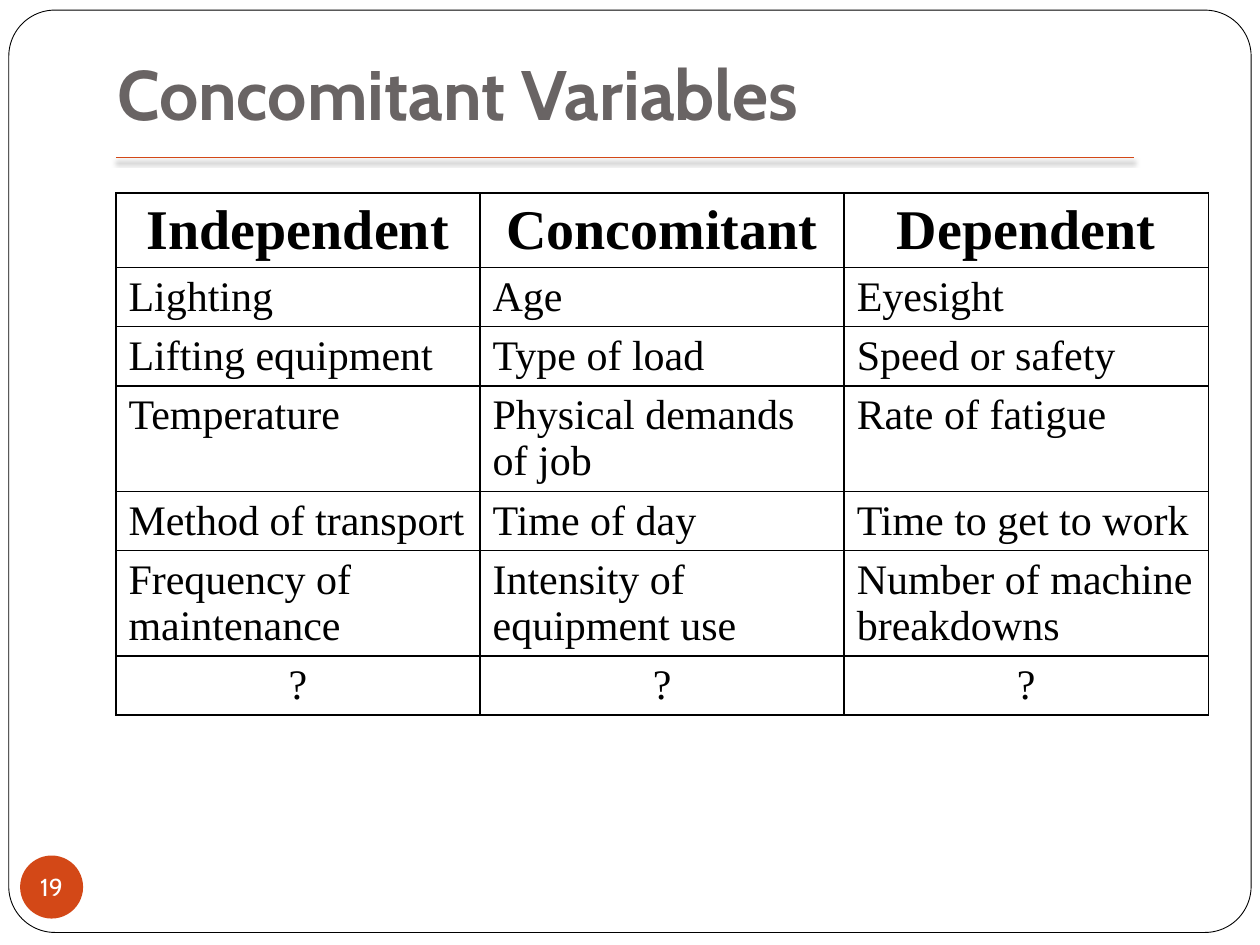
from dataclasses import dataclass

from lxml import etree
from pptx import Presentation
from pptx.dml.color import RGBColor
from pptx.enum.shapes import MSO_CONNECTOR, MSO_SHAPE
from pptx.enum.text import MSO_ANCHOR, MSO_AUTO_SIZE, PP_ALIGN
from pptx.oxml.ns import qn
from pptx.util import Emu, Inches, Pt

LEFT, CENTER = PP_ALIGN.LEFT, PP_ALIGN.CENTER
MIDDLE, BOTTOM = MSO_ANCHOR.MIDDLE, MSO_ANCHOR.BOTTOM
ROUNDED, OVAL = MSO_SHAPE.ROUNDED_RECTANGLE, MSO_SHAPE.OVAL
SLIDE_W, SLIDE_H = Inches(10), Inches(7.5)


@dataclass(frozen=True)
class Style:
    font: str
    size: int
    color: str
    bold: bool = False
    align: PP_ALIGN = LEFT


@dataclass(frozen=True)
class Theme:
    accent: str = "D34817"
    paper: str = "FFFFFF"
    ink: str = "000000"
    title: Style = Style("Cabin", 40, "696464", True)
    header: Style = Style("Times New Roman", 32, "000000", True, CENTER)
    body: Style = Style("Times New Roman", 24, "000000")
    open_row: Style = Style("Times New Roman", 24, "000000", align=CENTER)
    badge: Style = Style("Cabin", 14, "FFFFFF", align=CENTER)


@dataclass(frozen=True)
class Box:
    """Place on the slide, in percent of its width and height."""
    x: float
    y: float
    w: float
    h: float

    def emu(self) -> tuple[Emu, Emu, Emu, Emu]:
        return (Emu(round(SLIDE_W * self.x / 100)), Emu(round(SLIDE_H * self.y / 100)),
                Emu(round(SLIDE_W * self.w / 100)), Emu(round(SLIDE_H * self.h / 100)))


THEME = Theme()
FRAME = Box(0.7, 1.07, 98.6, 97.6)
TITLE = Box(8.3, 4, 85, 11.6)
RULE = Box(9.2, 16.67, 80.8, 0)
TABLE = Box(9.2, 20.4, 86.7, 76.93)
BADGE = Box(1.6, 90.53, 5, 6.67)
ROW_HEIGHT = Inches(0.41)

ROWS = [
    ("Independent", "Concomitant", "Dependent"),
    ("Lighting", "Age", "Eyesight"),
    ("Lifting equipment", "Type of load", "Speed or safety"),
    ("Temperature", "Physical demands of job", "Rate of fatigue"),
    ("Method of transport", "Time of day", "Time to get to work"),
    ("Frequency of maintenance", "Intensity of equipment use", "Number of machine breakdowns"),
    ("?", "?", "?"),
]


def rgb(color: str) -> RGBColor:
    return RGBColor.from_string(color)


def write(tf, text: str, style: Style) -> None:
    tf.text = text
    p = tf.paragraphs[0]
    p.alignment = style.align
    font = p.runs[0].font
    font.name, font.size, font.bold = style.font, Pt(style.size), style.bold
    font.color.rgb = rgb(style.color)


def add_shape(s, kind: MSO_SHAPE, box: Box, fill: str):
    sp = s.shapes.add_shape(kind, *box.emu())
    sp.shadow.inherit = False
    sp.fill.solid()
    sp.fill.fore_color.rgb = rgb(fill)
    sp.line.fill.background()
    return sp


def add_frame(s) -> None:
    sp = add_shape(s, ROUNDED, FRAME, THEME.paper)
    sp.adjustments[0] = 0.05
    sp.line.color.rgb = rgb(THEME.ink)
    sp.line.width = Pt(0.5)
    s.shapes.title.element.addprevious(sp.element)


def add_title(s, text: str) -> None:
    sp = s.shapes.title
    sp.left, sp.top, sp.width, sp.height = TITLE.emu()
    tf = sp.text_frame
    tf.auto_size = MSO_AUTO_SIZE.NONE
    tf.vertical_anchor = BOTTOM
    tf.margin_bottom = Inches(0.1)
    write(tf, text, THEME.title)


def border_cell(cell) -> None:
    tc_pr = cell.fill.background() or cell._tc.get_or_add_tcPr()
    for i, side in enumerate(("lnL", "lnR", "lnT", "lnB")):
        ln = etree.Element(qn(f"a:{side}"), w=str(Pt(1)))
        fill = etree.SubElement(ln, qn("a:solidFill"))
        etree.SubElement(fill, qn("a:srgbClr"), val=THEME.ink)
        tc_pr.insert(i, ln)


def add_table(s) -> None:
    frame = s.shapes.add_table(len(ROWS), len(ROWS[0]), *TABLE.emu())
    table = frame.table
    table.first_row = table.horz_banding = False
    styles = [THEME.header] + [THEME.body] * (len(ROWS) - 2) + [THEME.open_row]
    for r, (texts, style) in enumerate(zip(ROWS, styles)):
        table.rows[r].height = ROW_HEIGHT
        for c, text in enumerate(texts):
            cell = table.cell(r, c)
            write(cell.text_frame, text, style)
            border_cell(cell)
    frame.height = TABLE.emu()[3]


def add_rule(s) -> None:
    x, y, w, _ = RULE.emu()
    line = s.shapes.add_connector(MSO_CONNECTOR.STRAIGHT, x, y, x + w, y)
    line.line.color.rgb = rgb(THEME.accent)
    line.line.width = Pt(1)
    effects = etree.SubElement(line.element.spPr, qn("a:effectLst"))
    shadow = etree.SubElement(effects, qn("a:outerShdw"), blurRad=str(Pt(3)), dist=str(Pt(2)),
                              dir="5400000", rotWithShape="0")
    color = etree.SubElement(shadow, qn("a:srgbClr"), val=THEME.ink)
    etree.SubElement(color, qn("a:alpha"), val="50000")


def add_badge(s, number: str) -> None:
    tf = add_shape(s, OVAL, BADGE, THEME.accent).text_frame
    tf.margin_left = tf.margin_right = tf.margin_top = tf.margin_bottom = 0
    tf.word_wrap = False
    tf.vertical_anchor = MIDDLE
    write(tf, number, THEME.badge)


def main() -> None:
    prs = Presentation()
    prs.slide_width, prs.slide_height = SLIDE_W, SLIDE_H
    s = prs.slides.add_slide(prs.slide_layouts[5])
    add_frame(s)
    add_title(s, "Concomitant Variables")
    add_table(s)
    add_rule(s)
    add_badge(s, "19")
    prs.save("out.pptx")


if __name__ == "__main__":
    main()
